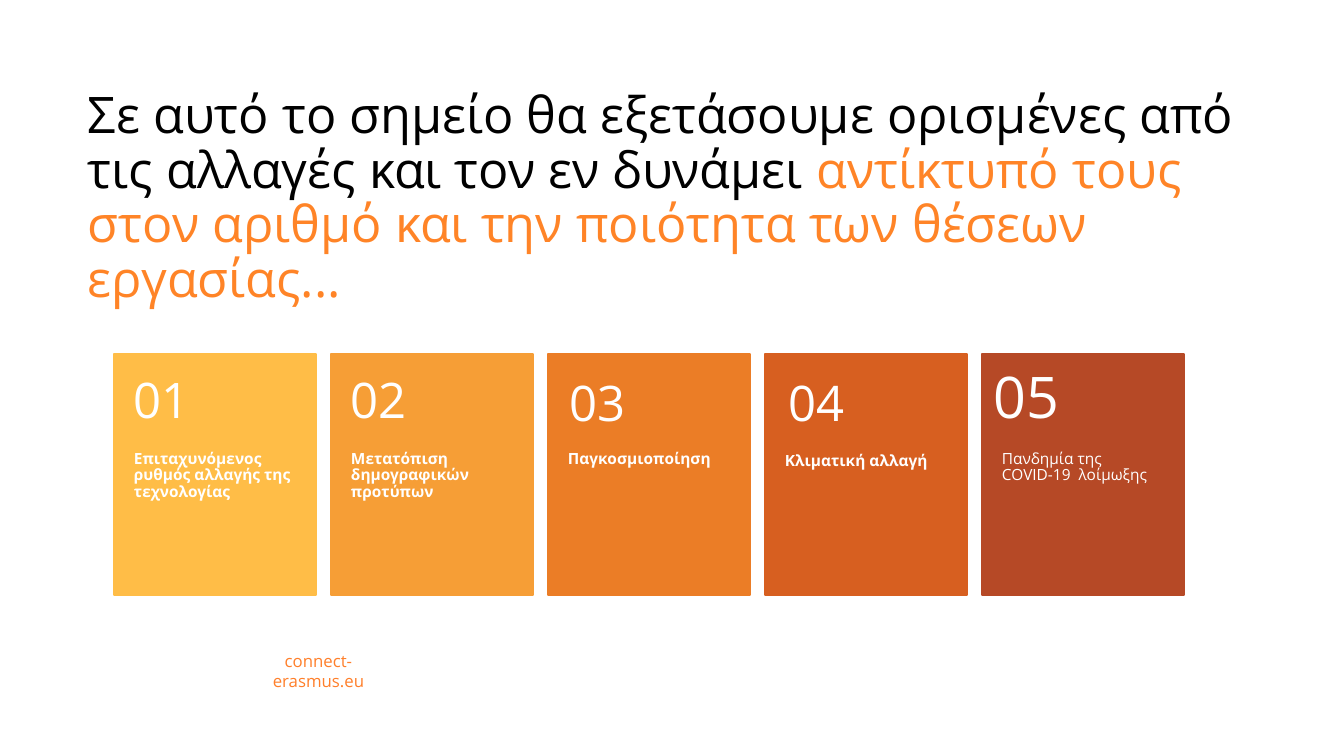
import pptx
import pptx.dml.color
import pptx.enum.shapes
import pptx.enum.text
import pptx.util

EMU_PER_PX = 12192000 / 1344
ALIGN = pptx.enum.text.PP_ALIGN
ANCHOR = pptx.enum.text.MSO_ANCHOR
COLOURS = {
    "title": "000000", "accent": "FF8427", "footer": "FF7F2A", "card_text": "FFFFFF",
    "01": "FFBD47", "02": "F69E36", "03": "EB7D26", "04": "D75F20", "05": "B64926",
}
FONT = "Open Sans"
LABEL_TOP = 97
LABEL_INSETS = (20, 0, 20, 36)
NUMBER_INSETS = (20, 18, 20, 18)
DEFAULT_INSETS = (10, 5, 10, 5)

STANDARD_NUMBER = {"box": (0, 0, 202, 97), "size": 35, "anchor": ANCHOR.MIDDLE,
                   "insets": NUMBER_INSETS, "spacing": 0.9}
CARDS = [
    ("01", "Επιταχυνόμενος ρυθμός αλλαγής της τεχνολογίας", {}, {}),
    ("02", "Μετατόπιση δημογραφικών προτύπων", {}, {}),
    ("03", "Παγκοσμιοποίηση", {"box": (2, 3, 202, 97)}, {}),
    ("04", "Κλιματική αλλαγή", {"box": (4, 3, 202, 97)}, {"spacing": 1.0}),
    ("05", "Πανδημία της COVID-19  λοίμωξης",
     {"box": (2, 2, 185, 80), "size": 41, "anchor": ANCHOR.TOP,
      "insets": DEFAULT_INSETS, "spacing": 1.0}, {"bold": False}),
]


def px(length):
    """Turn a length in px into EMU."""
    return pptx.util.Emu(round(length * EMU_PER_PX))


def rgb(name):
    """Look up a named colour."""
    return pptx.dml.color.RGBColor.from_string(COLOURS[name])


def assign(target, values):
    """Set each attribute in values on target."""
    for attribute, value in values.items():
        setattr(target, attribute, value)


def write(frame, runs, size, anchor=ANCHOR.TOP, insets=DEFAULT_INSETS,
          spacing=1.0, bold=False, align=ALIGN.LEFT):
    """Fill a text frame with one paragraph of (text, colour) runs."""
    left, top, right, bottom = map(px, insets)
    assign(frame, {"word_wrap": True, "auto_size": pptx.enum.text.MSO_AUTO_SIZE.NONE,
                   "vertical_anchor": anchor, "margin_left": left, "margin_top": top,
                   "margin_right": right, "margin_bottom": bottom})
    paragraph = frame.paragraphs[0]
    assign(paragraph, {"alignment": align, "line_spacing": spacing})
    for text, colour in runs:
        run = paragraph.add_run()
        run.text = text
        assign(run.font, {"name": FONT, "size": pptx.util.Pt(size), "bold": bold})
        run.font.color.rgb = rgb(colour)


def add_text(shapes, box, runs, **formats):
    """Add a text box in the given box."""
    write(shapes.add_textbox(*map(px, box)).text_frame, runs, **formats)


def place_title(slide, box):
    """Move the title placeholder to the box and write the two-colour heading."""
    heading = slide.shapes.title
    assign(heading, dict(zip(("left", "top", "width", "height"), map(px, box))))
    runs = [
        ("Σε αυτό το σημείο θα εξετάσουμε ορισμένες από τις αλλαγές και τον εν δυνάμει ", "title"),
        ("αντίκτυπό τους στον αριθμό και την ποιότητα των θέσεων εργασίας...", "accent"),
    ]
    write(heading.text_frame, runs, size=36, anchor=ANCHOR.BOTTOM,
          insets=(10, 5, 10, 70), spacing=0.9)


def place_card(shapes, box, number, label, number_formats, label_formats):
    """Draw one coloured card with its number and label."""
    left, top, width, height = box
    card = shapes.add_shape(pptx.enum.shapes.MSO_SHAPE.RECTANGLE, *map(px, box))
    card.shadow.inherit = False
    card.fill.solid()
    card.fill.fore_color.rgb = rgb(number)
    card.line.color.rgb = rgb(number)
    card.line.width = pptx.util.Pt(1)

    label_box = (left, top + LABEL_TOP, width, height - LABEL_TOP)
    label_style = {"size": 11, "insets": LABEL_INSETS, "spacing": 0.9, "bold": True}
    add_text(shapes, label_box, [(label, "card_text")], **(label_style | label_formats))

    number_style = STANDARD_NUMBER | number_formats
    dx, dy, number_width, number_height = number_style.pop("box")
    add_text(shapes, (left + dx, top + dy, number_width, number_height),
             [(number, "card_text")], **number_style)


def place_cards(slide, box, gap):
    """Spread the cards evenly across the box."""
    left, top, width, height = box
    card_width = (width - gap * (len(CARDS) - 1)) // len(CARDS)
    group = slide.shapes.add_group_shape()
    for index, card in enumerate(CARDS):
        card_left = left + index * (card_width + gap)
        place_card(group.shapes, (card_left, top, card_width, height), *card)


def place_footer(slide, box):
    """Write the web address in the box."""
    add_text(slide.shapes, box, [("connect-erasmus.eu", "footer")], size=12,
             anchor=ANCHOR.MIDDLE, insets=(15, 5, 15, 5), align=ALIGN.CENTER)


def main():
    """Build and save the slide."""
    deck = pptx.Presentation()
    assign(deck, {"slide_width": px(1344), "slide_height": px(756)})
    slide = deck.slides.add_slide(deck.slide_layouts[5])
    place_title(slide, (78, 100, 1189, 278))
    place_cards(slide, (114, 354, 1070, 241), gap=15)
    place_footer(slide, (230, 656, 177, 30))
    deck.save("out.pptx")


if __name__ == "__main__":
    main()
